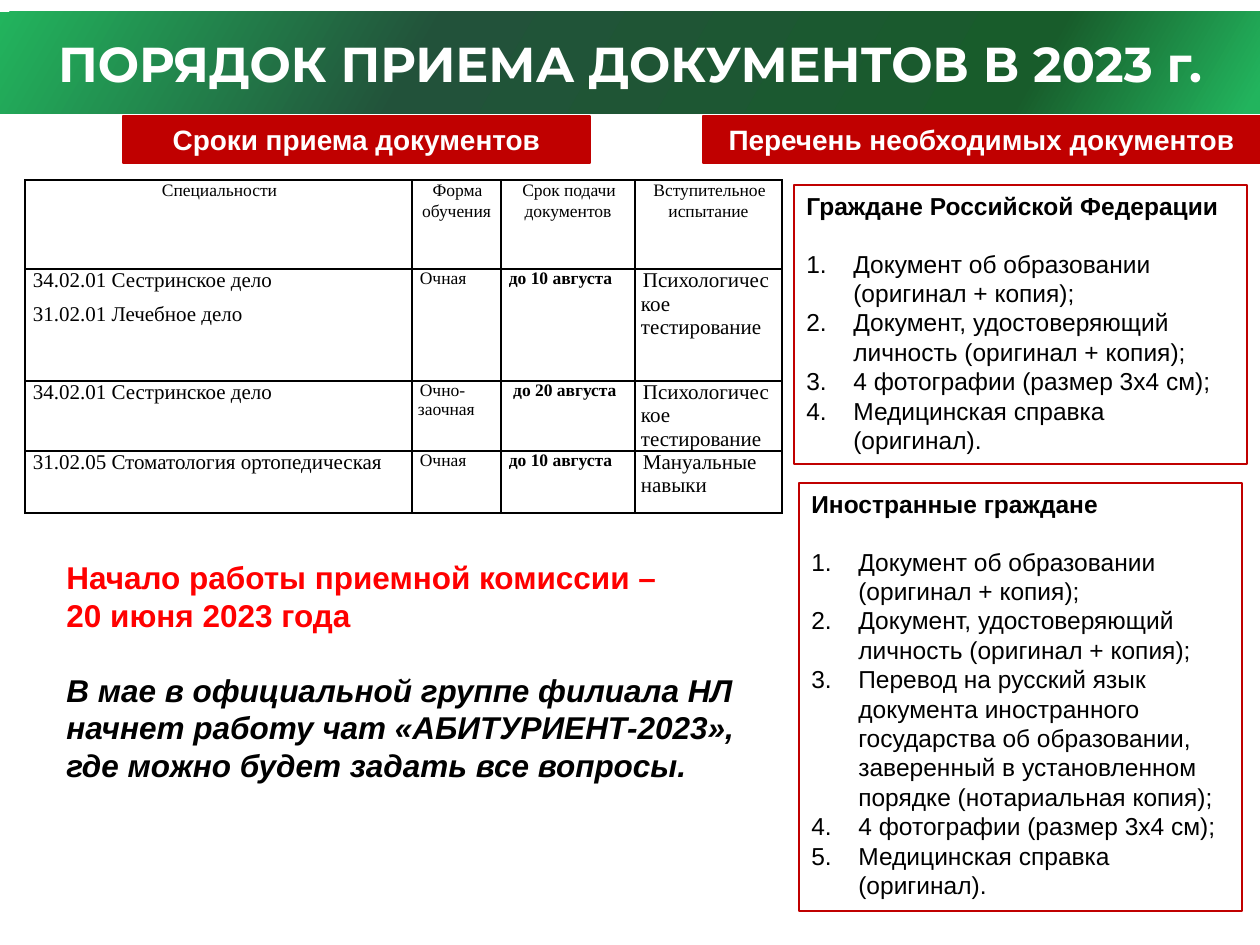
from lxml import etree
from pptx import Presentation, util as u
from pptx.dml.color import RGBColor
from pptx.enum import shapes, text
from pptx.oxml import parse_xml
from pptx.oxml.ns import qn

PX = 914400 / 126
NS = 'xmlns:a="http://schemas.openxmlformats.org/drawingml/2006/main"'
C = {"white": "FFFFFF", "black": "000000", "dark_red": "C00000", "red": "FF0000",
     "green": "22B45D", "teal": "22523A", "forest": "185C2B"}
AL = text.PP_ALIGN


def style(p, size, color, bold=False, italic=False, font="Arial"):
    for r in p.runs:
        r.font.size, r.font.name = u.Pt(size), font
        r.font.bold, r.font.italic = bold, italic
        r.font.color.rgb = RGBColor.from_string(C[color])


def box(x, y, w, h, fill=None, line=None, line_pt=0.75):
    sp = s.shapes.add_shape(shapes.MSO_SHAPE.RECTANGLE, *[int(v * PX) for v in (x, y, w, h)])
    sp.shadow.inherit = False
    if fill:
        sp.fill.solid()
        sp.fill.fore_color.rgb = RGBColor.from_string(C[fill])
    else:
        sp.fill.background()
    if line:
        sp.line.color.rgb = RGBColor.from_string(C[line])
        sp.line.width = u.Pt(line_pt)
    else:
        sp.line.fill.background()
    sp.text_frame.word_wrap = True
    return sp


prs = Presentation()
prs.slide_width, prs.slide_height = u.Inches(10), u.Inches(7.5)
s = prs.slides.add_slide(prs.slide_layouts[6])

# Title band with gradient
sp = box(0, 12, 1260, 102)
stops = "".join(f'<a:gs pos="{pos}000"><a:srgbClr val="{C[name]}"/></a:gs>'
                for pos, name in [(0, "green"), (34, "teal"), (81, "forest"), (99, "green")])
grad = parse_xml(f'<a:gradFill {NS} rotWithShape="1"><a:gsLst>{stops}</a:gsLst>'
                 '<a:lin ang="1800000" scaled="0"/></a:gradFill>')
spPr = sp.fill._xPr
spPr.replace(spPr.find(qn("a:noFill")), grad)
tf = sp.text_frame
tf.text = "ПОРЯДОК ПРИЕМА ДОКУМЕНТОВ В 2023 г."
tf.vertical_anchor = text.MSO_ANCHOR.MIDDLE
tf.paragraphs[0].alignment = AL.CENTER
style(tf.paragraphs[0], 28, "white", bold=True, font="Montserrat")

# Section headings
for x, w, heading in [(123, 467, "Сроки приема документов"),
                      (703, 557, "Перечень необходимых документов")]:
    tf = box(x, 116, w, 47, "dark_red", "dark_red").text_frame
    tf.text = heading
    tf.vertical_anchor = text.MSO_ANCHOR.TOP
    tf.paragraphs[0].alignment = AL.CENTER
    style(tf.paragraphs[0], 16, "white", bold=True)

# Table of deadlines
rows = [
    ["Специальности", "Форма обучения", "Срок подачи документов", "Вступительное испытание"],
    ["34.02.01 Сестринское дело\n31.02.01 Лечебное дело", "Очная", "до 10 августа",
     "Психологическое тестирование"],
    ["34.02.01 Сестринское дело", "Очно-заочная", " до 20 августа",
     "Психологическое тестирование"],
    ["31.02.05 Стоматология ортопедическая", "Очная", "до 10 августа", "Мануальные навыки"],
]
widths, heights = [387, 89, 134, 147], [89, 112, 62, 62]
frame = s.shapes.add_table(4, 4, *[int(v * PX) for v in (25, 180, sum(widths), sum(heights))])
tbl = frame.table
tbl.first_row = tbl.horz_banding = False
for col, w in zip(tbl.columns, widths):
    col.width = int(w * PX)
for row, h in zip(tbl.rows, heights):
    row.height = int(h * PX)
for i, row in enumerate(rows):
    for j, value in enumerate(row):
        cell = tbl.cell(i, j)
        cell.text = value
        cell.margin_left = cell.margin_right = int(6 * PX)
        cell.margin_top = cell.margin_bottom = 0
        for p in cell.text_frame.paragraphs:
            p.alignment = AL.JUSTIFY if i else AL.CENTER
            p.space_after = u.Pt(6 if i else 8)
            if not i:
                p.line_spacing = 1.07
            pPr = p._p.get_or_add_pPr()
            pPr.set("marL", "0")
            pPr.set("indent", str(int(2 * PX)))
            style(p, 12 if i and j in (0, 3) else 10, "black",
                  bold=i > 0 and j == 2, font="Times New Roman")
        tcPr = cell._tc.get_or_add_tcPr()
        for side in ("lnL", "lnR", "lnT", "lnB"):
            tcPr.append(parse_xml(f'<a:{side} {NS} w="12700"><a:solidFill><a:srgbClr '
                                  f'val="{C["black"]}"/></a:solidFill></a:{side}>'))
        cell.fill.solid()
        cell.fill.fore_color.rgb = RGBColor.from_string(C["white"])

# Lists of required documents
common = ["Документ об образовании (оригинал + копия);",
          "Документ, удостоверяющий личность (оригинал + копия);"]
closing = ["4 фотографии (размер 3х4 см);", "Медицинская справка (оригинал)."]
translation = ["Перевод на русский язык документа иностранного государства об образовании, "
               "заверенный в установленном порядке (нотариальная копия);"]
for area, heading, items in [
        ((794, 185, 453, 279), "Граждане Российской Федерации", common + closing),
        ((799, 483, 443, 428), "Иностранные граждане", common + translation + closing)]:
    tf = box(*area, line="dark_red", line_pt=1.5).text_frame
    tf.text = "\n".join([heading] + items)
    tf.vertical_anchor = text.MSO_ANCHOR.TOP
    for n, p in enumerate(tf.paragraphs):
        p.alignment = AL.LEFT
        if n:
            pPr = p._p.get_or_add_pPr()
            pPr.set("marL", str(int(47 * PX)))
            pPr.set("indent", str(int(-47 * PX)))
            etree.SubElement(pPr, qn("a:buAutoNum"), type="arabicPeriod")
        if n == 1:
            p.space_before = u.Pt(16)
        style(p, 14, "black", bold=n == 0)

# Announcement
tf = s.shapes.add_textbox(*[int(v * PX) for v in (54, 552, 735, 357)]).text_frame
tf.word_wrap = True
tf.text = "\n".join([
    "Начало работы приемной комиссии –",
    "20 июня 2023 года",
    "В мае в официальной группе филиала НЛ",
    "начнет работу чат «АБИТУРИЕНТ-2023», где можно будет задать все вопросы."])
for n, p in enumerate(tf.paragraphs):
    style(p, 18, "red" if n < 2 else "black", bold=True, italic=n >= 2)
tf.paragraphs[2].space_before = u.Pt(21)

prs.save("out.pptx")
